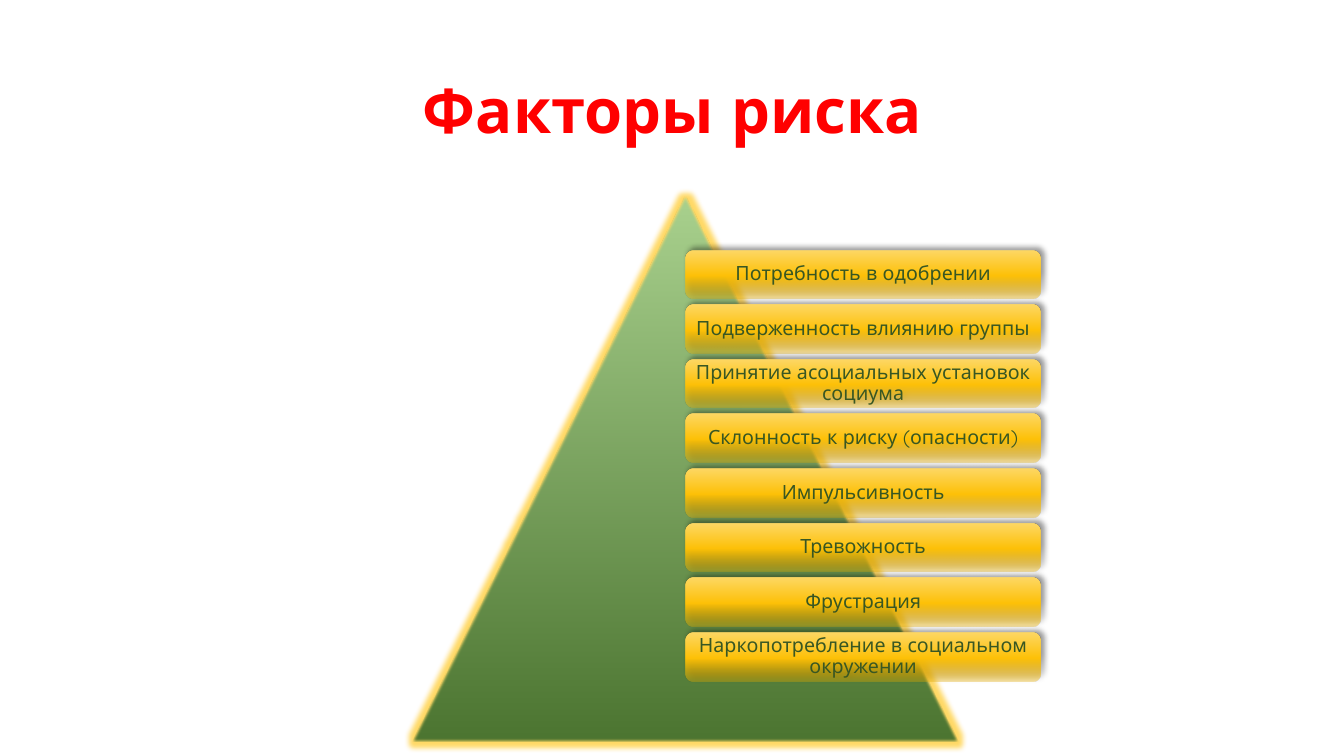
import pptx
import pptx.dml.color
import pptx.enum.shapes
import pptx.enum.text
import pptx.oxml
import pptx.oxml.ns
import pptx.util

Inches, Pt = pptx.util.Inches, pptx.util.Pt
SHAPE = pptx.enum.shapes.MSO_SHAPE
FONT = "Quicksand"
COLORS = {
    "title": "FF0000", "label": "385723", "glow": "FFC000", "shadow": "000000",
    "pyramid_base": "4B7430", "pyramid_top": "A9D18E",
    "bar_base": "E6AD00", "bar_middle": "FFC208", "bar_top": "FFD966",
}
FACTORS = [
    "Потребность в одобрении",
    "Подверженность влиянию группы",
    "Принятие асоциальных установок социума",
    "Склонность к риску (опасности)",
    "Импульсивность",
    "Тревожность",
    "Фрустрация",
    "Наркопотребление в социальном окружении",
]
NS = pptx.oxml.ns.nsdecls("a")


def color_xml(name, opacity=100):
    return f'<a:srgbClr val="{COLORS[name]}"><a:alpha val="{opacity * 1000}"/></a:srgbClr>'


def style_shape(shape, stops, effects):
    """Upward gradient from (position, colour, opacity) stops, no line, given effects."""
    shape.line.fill.background()
    shape.fill.gradient()
    shape.fill.gradient_angle = 90
    stop_list = shape.fill._fill._gradFill.find(pptx.oxml.ns.qn("a:gsLst"))
    for stop in list(stop_list):
        stop_list.remove(stop)
    for position, name, opacity in stops:
        stop_list.append(pptx.oxml.parse_xml(
            f'<a:gs {NS} pos="{position * 1000}">{color_xml(name, opacity)}</a:gs>'))
    shape.shadow.inherit = False
    effect_list = shape._element.spPr.find(pptx.oxml.ns.qn("a:effectLst"))
    for effect in pptx.oxml.parse_xml(f"<a:effectLst {NS}>{effects}</a:effectLst>"):
        effect_list.append(effect)


def format_text(frame, text, size, color, bold=False):
    frame.text = text
    frame.word_wrap = True
    frame.vertical_anchor = pptx.enum.text.MSO_ANCHOR.MIDDLE
    paragraph = frame.paragraphs[0]
    paragraph.alignment = pptx.enum.text.PP_ALIGN.CENTER
    paragraph.line_spacing = 0.9
    paragraph.font.name = FONT
    paragraph.font.size = Pt(size)
    paragraph.font.bold = bold
    paragraph.font.color.rgb = pptx.dml.color.RGBColor.from_string(COLORS[color])


def place_title(slide, left, top, width, height):
    title = slide.shapes.title
    title.left, title.top = Inches(left), Inches(top)
    title.width, title.height = Inches(width), Inches(height)
    format_text(title.text_frame, "Факторы риска", 44, "title", bold=True)


def add_factor(slide, text, kind, left, top, width, height):
    bar = slide.shapes.add_shape(
        kind, Inches(left), Inches(top), Inches(width), Inches(height))
    style_shape(
        bar,
        [(0, "bar_base", 35), (48, "bar_middle", 100), (100, "bar_top", 100)],
        f'<a:outerShdw blurRad="{Pt(4)}" dist="{Pt(3)}" dir="18900000" algn="bl" '
        f'rotWithShape="0">{color_xml("shadow", 40)}</a:outerShdw>')
    frame = bar.text_frame
    frame.margin_left = frame.margin_right = Inches(0.06)
    frame.margin_top = frame.margin_bottom = Inches(0.06)
    format_text(frame, text, 14, "label")


def add_pyramid(slide, left, top, side):
    # Glowing triangle
    pyramid = slide.shapes.add_shape(
        SHAPE.ISOSCELES_TRIANGLE, Inches(left), Inches(top), Inches(side), Inches(side))
    style_shape(
        pyramid,
        [(0, "pyramid_base", 100), (100, "pyramid_top", 100)],
        f'<a:glow rad="{Pt(8)}">{color_xml("glow", 60)}</a:glow>'
        f'<a:softEdge rad="{Pt(1)}"/>')

    # Factor bars, starting at the triangle's axis
    bar_height = 0.48
    pitch = side / 10
    for index, text in enumerate(FACTORS):
        kind = SHAPE.FLOWCHART_ALTERNATE_PROCESS if index == 2 else SHAPE.ROUNDED_RECTANGLE
        add_factor(slide, text, kind, left + side / 2, top + pitch * (index + 1),
                   side * 0.65, bar_height)


def main():
    deck = pptx.Presentation()
    deck.slide_width, deck.slide_height = Inches(13.33), Inches(7.5)
    slide = deck.slides.add_slide(deck.slide_layouts[5])
    place_title(slide, 0.92, 0.4, 11.5, 1.45)
    add_pyramid(slide, 4.09, 1.94, 5.42)
    deck.save("out.pptx")


if __name__ == "__main__":
    main()
